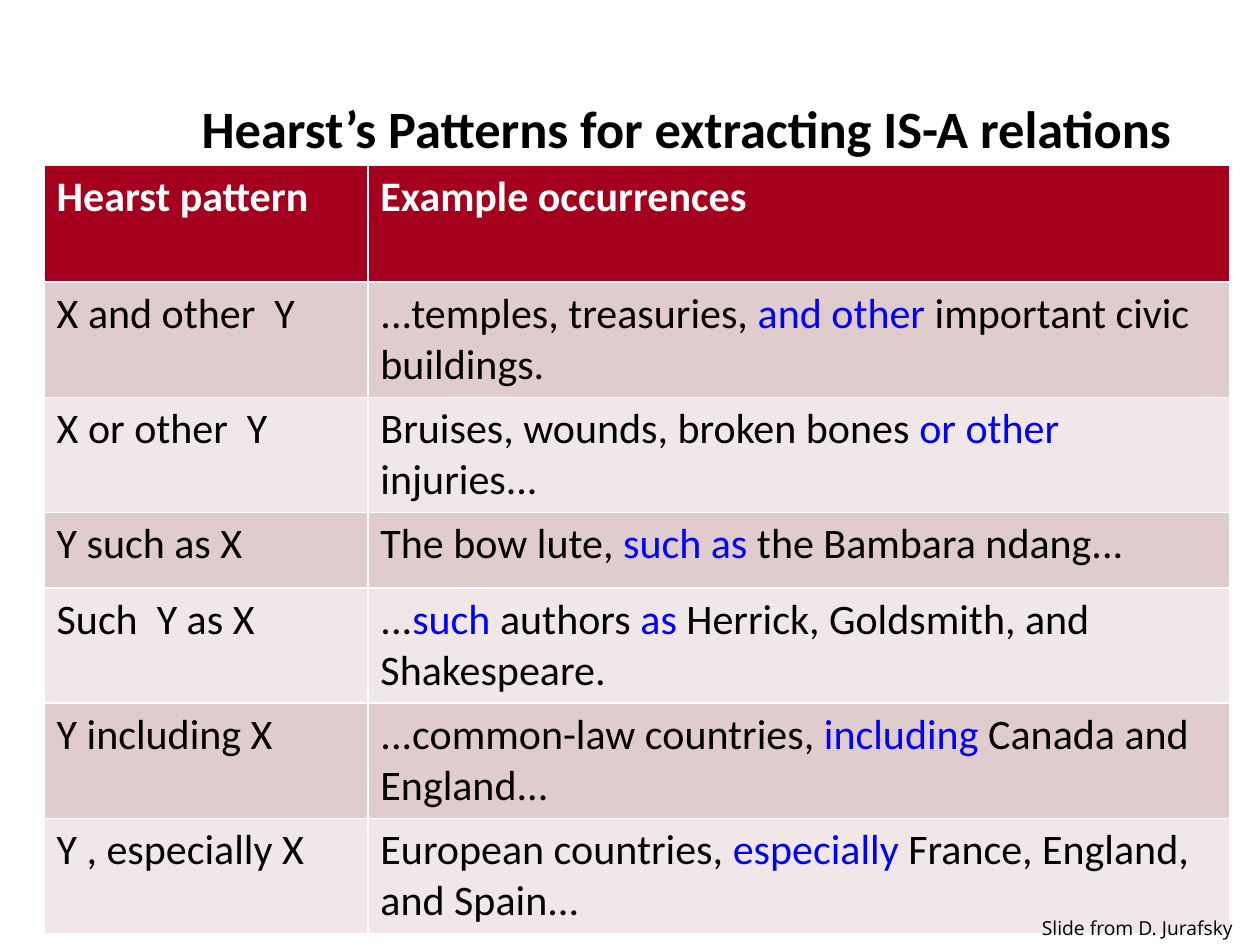
import pptx
import pptx.util
import pptx.dml.color
import pptx.enum.text

Inches = pptx.util.Inches
Color = pptx.dml.color.RGBColor
BLACK = Color(0, 0, 0)
WHITE = Color(255, 255, 255)
BLUE = Color(0, 0, 255)
RED = Color(0xA4, 0x00, 0x1D)
ROSE = Color(0xE0, 0xCC, 0xCD)
PALE = Color(0xF0, 0xE7, 0xE8)

COLS = [2.57, 6.84]
ROWS = [0.93, 0.61, 0.58, 0.6, 0.61, 0.6, 0.67]
CELLS = [
    ("Hearst pattern", "Example occurrences"),
    ("X and other  Y", "...temples, treasuries, |and other |important civic buildings."),
    ("X or other  Y", "Bruises, wounds, broken bones |or other |injuries..."),
    ("Y such as X", "The bow lute, |such as |the Bambara ndang..."),
    ("Such  Y as X", "...|such| authors |as| Herrick, Goldsmith, and Shakespeare."),
    ("Y including X", "...common-law countries, |including| Canada and England..."),
    ("Y , especially X", "European countries, |especially| France, England, and Spain..."),
]


def style(run, size, color, bold=False, face="Calibri"):
    run.font.name = face
    run.font.size = pptx.util.Pt(size)
    run.font.bold = bold
    run.font.color.rgb = color


deck = pptx.Presentation()
deck.slide_width = Inches(10)
deck.slide_height = Inches(7.5)
slide = deck.slides.add_slide(deck.slide_layouts[5])

title = slide.shapes.title
title.left, title.top = Inches(1.5), Inches(0.31)
title.width, title.height = Inches(8.42), Inches(1)
frame = title.text_frame
frame.text = "Hearst’s Patterns for extracting IS-A relations"
frame.vertical_anchor = pptx.enum.text.MSO_ANCHOR.BOTTOM
frame.paragraphs[0].alignment = pptx.enum.text.PP_ALIGN.LEFT
style(frame.paragraphs[0].runs[0], 30, BLACK, True)

holder = slide.shapes.add_table(
    len(ROWS), len(COLS), Inches(0.35), Inches(1.31), Inches(9.4), Inches(6.03))
table = holder.table
for col, width in zip(table.columns, COLS):
    col.width = Inches(width)
for row, height in zip(table.rows, ROWS):
    row.height = Inches(height)
holder.height = Inches(6.03)

for r, texts in enumerate(CELLS):
    head = r == 0
    for c, text in enumerate(texts):
        cell = table.cell(r, c)
        cell.fill.solid()
        cell.fill.fore_color.rgb = RED if head else (PALE, ROSE)[r % 2]
        for n, part in enumerate(text.split("|")):
            run = cell.text_frame.paragraphs[0].add_run()
            run.text = part
            style(run, 24, WHITE if head else (BLACK, BLUE)[n % 2], head)

credit = slide.shapes.add_textbox(Inches(8.17), Inches(7.22), Inches(1.82), Inches(0.29))
frame = credit.text_frame
frame.word_wrap = False
frame.auto_size = pptx.enum.text.MSO_AUTO_SIZE.SHAPE_TO_FIT_TEXT
frame.text = "Slide from D. Jurafsky"
style(frame.paragraphs[0].runs[0], 11, BLACK, face="Open Sans")

deck.save("out.pptx")
